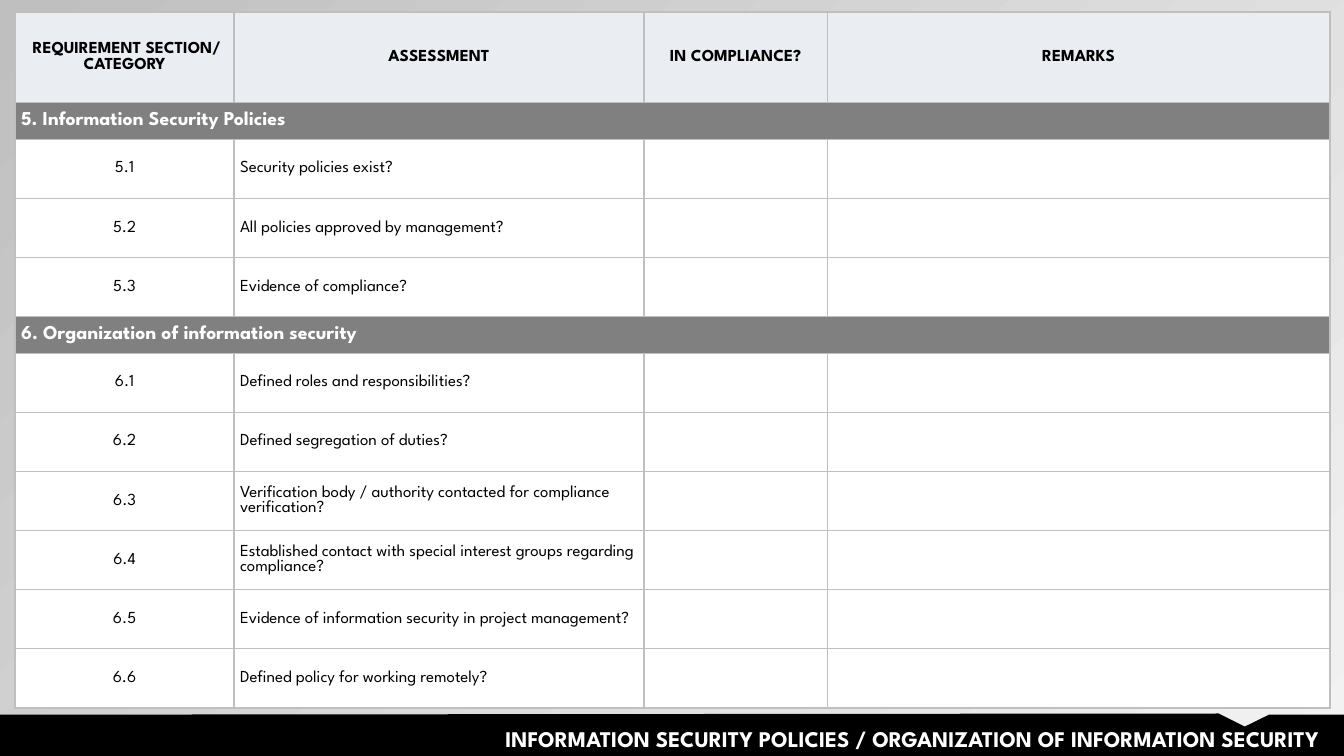
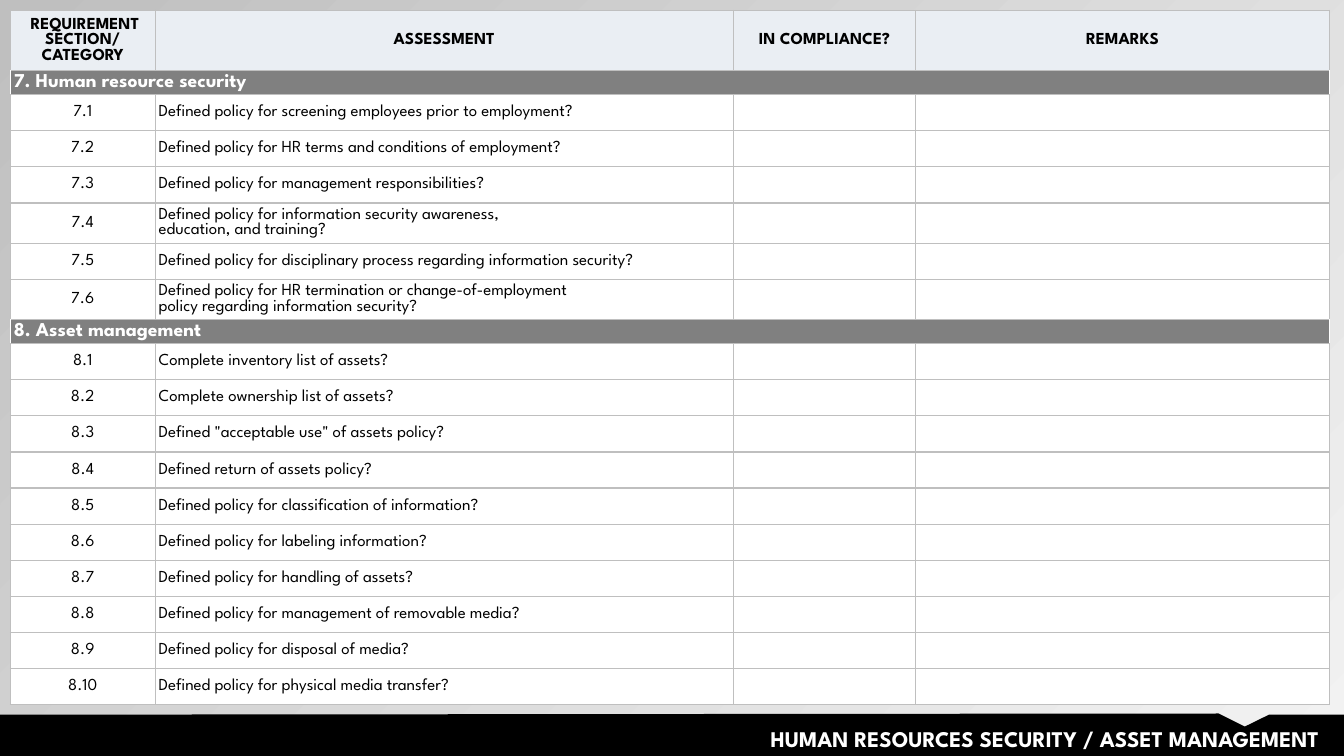
from dataclasses import dataclass
from typing import Optional

from lxml.etree import SubElement
from pptx import Presentation
from pptx.dml.color import RGBColor
from pptx.enum.text import MSO_ANCHOR, PP_ALIGN
from pptx.oxml.ns import qn
from pptx.util import Cm, Pt

HUES = {
    "black": "000000",
    "white": "FFFFFF",
    "head": "EAEEF3",
    "band": "808080",
    "rule": "BFBFBF",
    "pale": "F2F2F2",
}
FONT = "League Spartan"
WIDE, HIGH = 33.87, 19.05
FOOT = [(0, 18.01), (30.71, 17.98), (31.37, 18.31), (31.98, 18.01),
        (WIDE, 18.01), (WIDE, HIGH), (0, HIGH)]
HEADS = [" REQUIREMENT SECTION/\nCATEGORY", "ASSESSMENT", "IN COMPLIANCE?", "REMARKS"]


@dataclass
class Section:
    num: int
    name: str
    asks: list[str]


@dataclass
class Grid:
    left: float
    top: float
    cols: list[float]
    head: float
    band: float
    row: float
    tall: float
    inset: float
    span: int
    edge: str


@dataclass
class Sheet:
    title: str
    grid: Grid
    groups: list[Section]


@dataclass
class Style:
    size: int = 12
    hue: str = "black"
    bold: bool = False
    align: PP_ALIGN = PP_ALIGN.LEFT


HEAD = Style(bold=True, align=PP_ALIGN.CENTER)
BAND = Style(14, "white", True)
MARK = Style(align=PP_ALIGN.CENTER)
BODY = Style()
TITLE = Style(16, "white", True, PP_ALIGN.RIGHT)

SHEETS = [
    Sheet(
        "INFORMATION SECURITY POLICIES / ORGANIZATION OF INFORMATION SECURITY",
        Grid(0.38, 0.3, [5.52, 10.33, 4.62, 12.67], 2.29, 0.92, 1.49, 1.49, 0.15, 2, "rule"),
        [
            Section(5, "Information Security Policies", [
                "Security policies exist?",
                "All policies approved by management?",
                "Evidence of compliance?",
            ]),
            Section(6, "Organization of information security", [
                "Defined roles and responsibilities?",
                "Defined segregation of duties?",
                "Verification body / authority contacted for compliance verification?",
                "Established contact with special interest groups regarding compliance?",
                "Evidence of information security in project management?",
                "Defined policy for working remotely?",
            ]),
        ],
    ),
    Sheet(
        "HUMAN RESOURCES SECURITY / ASSET MANAGEMENT",
        Grid(0.26, 0.26, [3.65, 14.57, 4.6, 10.42], 1.49, 0.6, 0.91, 1.01, 0.09, 4, "white"),
        [
            Section(7, "Human resource security", [
                "Defined policy for screening employees prior to employment?",
                "Defined policy for HR terms and conditions of employment?",
                "Defined policy for management responsibilities?",
                "Defined policy for information security awareness,\neducation, and training?",
                "Defined policy for disciplinary process regarding information security?",
                "Defined policy for HR termination or change-of-employment\n"
                "policy regarding information security?",
            ]),
            Section(8, "Asset management", [
                "Complete inventory list of assets?",
                "Complete ownership list of assets?",
                'Defined "acceptable use" of assets policy?',
                "Defined return of assets policy?",
                "Defined policy for classification of information?",
                "Defined policy for labeling information?",
                "Defined policy for handling of assets?",
                "Defined policy for management of removable media?",
                "Defined policy for disposal of media?",
                "Defined policy for physical media transfer?",
            ]),
        ],
    ),
]


def tint(name: str) -> RGBColor:
    return RGBColor.from_string(HUES[name])


def write(frame, text: str, style: Style) -> None:
    for i, line in enumerate(text.split("\n")):
        para = frame.add_paragraph() if i else frame.paragraphs[0]
        para.alignment = style.align
        if not line:
            SubElement(para._p, qn("a:endParaRPr"), sz=str(style.size * 100))
            continue
        run = para.add_run()
        run.text = line
        run.font.name = FONT
        run.font.size = Pt(style.size)
        run.font.bold = style.bold
        run.font.color.rgb = tint(style.hue)


def border(cell, hues: list[Optional[str]]) -> None:
    props = cell._tc.get_or_add_tcPr()
    for side, hue in zip("LRTB", hues):
        line = SubElement(props, qn(f"a:ln{side}"), w=str(Pt(1)))
        if hue:
            fill = SubElement(line, qn("a:solidFill"))
            SubElement(fill, qn("a:srgbClr"), val=HUES[hue])
        else:
            SubElement(line, qn("a:noFill"))


def fill_cell(cell, text: str, style: Style, fill: str, inset: float,
              hues: list[Optional[str]]) -> None:
    border(cell, hues)
    cell.fill.solid()
    cell.fill.fore_color.rgb = tint(fill)
    cell.vertical_anchor = MSO_ANCHOR.MIDDLE
    cell.margin_left = cell.margin_right = Cm(inset)
    cell.margin_top = cell.margin_bottom = 0
    write(cell.text_frame, text, style)


def draw_band(table, row: int, group: Section, grid: Grid) -> None:
    last = len(grid.cols) - 1
    for col in range(last + 1):
        end = grid.span - 1 if col == 0 else col
        hues = [grid.edge if col == 0 else None,
                grid.edge if end == last else None, "rule", "rule"]
        text = "" if col else f"{group.num}. {group.name}"
        fill_cell(table.cell(row, col), text, BAND if text else BODY, "band", grid.inset, hues)
    table.cell(row, 0).merge(table.cell(row, grid.span - 1))


def draw_row(table, row: int, texts: list[str], styles: list[Style], fill: str,
             inset: float) -> None:
    for col, (text, style) in enumerate(zip(texts, styles)):
        fill_cell(table.cell(row, col), text, style, fill, inset, ["rule"] * 4)


def draw_grid(slide, grid: Grid, groups: list[Section]) -> None:
    highs = [grid.head]
    for group in groups:
        highs.append(grid.band)
        highs += [grid.tall if "\n" in ask else grid.row for ask in group.asks]
    table = slide.shapes.add_table(
        len(highs), len(grid.cols), Cm(grid.left), Cm(grid.top),
        Cm(sum(grid.cols)), Cm(sum(highs))).table
    table.first_row = table.horz_banding = False
    for col, wide in zip(table.columns, grid.cols):
        col.width = Cm(wide)
    for row, high in zip(table.rows, highs):
        row.height = Cm(high)
    draw_row(table, 0, HEADS, [HEAD] * 4, "head", grid.inset)
    at = 1
    for group in groups:
        draw_band(table, at, group, grid)
        for i, ask in enumerate(group.asks, 1):
            draw_row(table, at + i, [f"{group.num}.{i}", ask, "", ""],
                     [MARK, BODY, BODY, BODY], "white", grid.inset)
        at += len(group.asks) + 1


def draw_back(slide) -> None:
    fill = slide.background.fill
    fill.gradient()
    fill.gradient_angle = 135
    for stop, hue in zip(fill.gradient_stops, ("pale", "rule")):
        stop.color.rgb = tint(hue)
    first = slide.element.find(".//" + qn("a:srgbClr"))
    SubElement(first, qn("a:alpha"), val="40000")


def draw_foot(slide, title: str) -> None:
    spots = [(Cm(x), Cm(y)) for x, y in FOOT]
    pen = slide.shapes.build_freeform(*spots[0])
    pen.add_line_segments(spots[1:], close=True)
    shape = pen.convert_to_shape()
    shape.shadow.inherit = False
    shape.fill.solid()
    shape.fill.fore_color.rgb = tint("black")
    shape.line.fill.background()
    frame = slide.shapes.add_textbox(Cm(7.95), Cm(18.14), Cm(25.55), Cm(0.94)).text_frame
    frame.word_wrap = True
    write(frame, title, TITLE)


def main() -> None:
    deck = Presentation()
    deck.slide_width, deck.slide_height = Cm(WIDE), Cm(HIGH)
    for sheet in SHEETS:
        slide = deck.slides.add_slide(deck.slide_layouts[6])
        draw_back(slide)
        draw_grid(slide, sheet.grid, sheet.groups)
        draw_foot(slide, sheet.title)
    deck.save("out.pptx")


if __name__ == "__main__":
    main()
